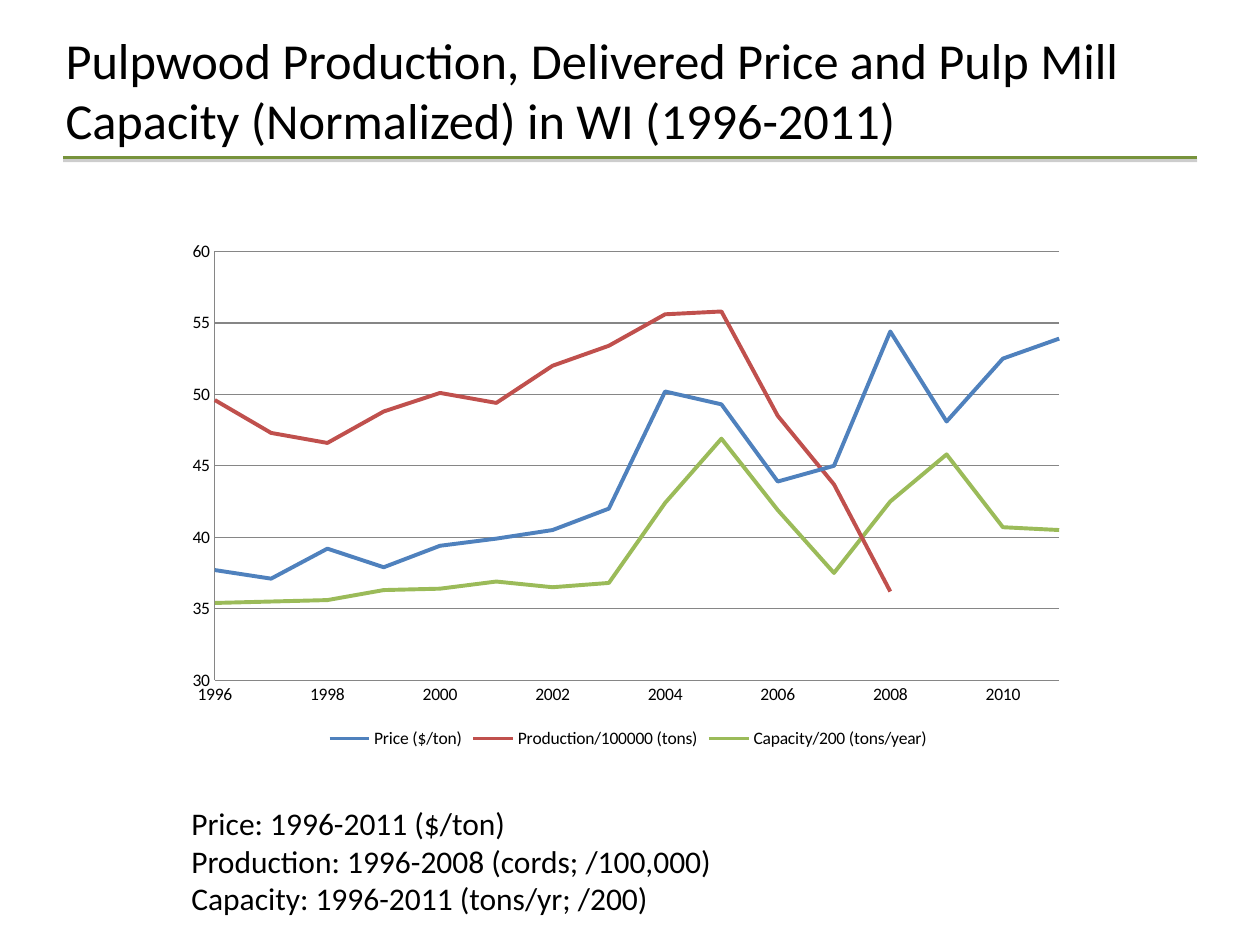
from lxml.etree import SubElement
from pptx import Presentation
from pptx.chart.data import XyChartData
from pptx.dml.color import RGBColor
from pptx.enum.chart import XL_CHART_TYPE, XL_LEGEND_POSITION, XL_TICK_MARK
from pptx.enum.shapes import MSO_CONNECTOR
from pptx.enum.text import MSO_ANCHOR, MSO_AUTO_SIZE, PP_ALIGN
from pptx.oxml import parse_xml
from pptx.oxml.ns import nsdecls, qn
from pptx.util import Inches, Pt

TITLE = "Pulpwood Production, Delivered Price and Pulp Mill Capacity (Normalized) in WI (1996-2011)"
NOTES = [
    "Price: 1996-2011 ($/ton)",
    "Production: 1996-2008 (cords; /100,000)",
    "Capacity: 1996-2011 (tons/yr; /200)",
]
FIRST_YEAR, LAST_YEAR = 1996, 2011
SERIES = [
    ("Price ($/ton)", "4F81BD",
     [37.7, 37.1, 39.2, 37.9, 39.4, 39.9, 40.5, 42, 50.2, 49.3, 43.9, 45, 54.4, 48.1, 52.5, 53.9]),
    ("Production/100000 (tons)", "C0504D",
     [49.6, 47.3, 46.6, 48.8, 50.1, 49.4, 52, 53.4, 55.6, 55.8, 48.5, 43.7, 36.2]),
    ("Capacity/200 (tons/year)", "9BBB59",
     [35.4, 35.5, 35.6, 36.3, 36.4, 36.9, 36.5, 36.8, 42.4, 46.9, 41.9, 37.5, 42.5, 45.8, 40.7, 40.5]),
]
PLOT_LAYOUT = {"x": 0.04, "y": 0.04, "w": 0.94, "h": 0.82}
THEME = {
    "font": "Calibri", "text": "000000", "rule": "77933C", "grid": "868686",
    "title": 28.8, "notes": 18, "chart": 10,
}


def color(value):
    return RGBColor.from_string(value)


def style_font(font, size):
    font.name = THEME["font"]
    font.size = Pt(size)
    font.color.rgb = color(THEME["text"])


def add_run(p, text, size):
    r = p.add_run()
    r.text = text
    style_font(r.font, size)


def add_title(slide):
    sp = slide.shapes.title
    sp.left, sp.top, sp.width, sp.height = map(Inches, (0.42, 0.17, 9, 1.08))
    tf = sp.text_frame
    tf.auto_size = MSO_AUTO_SIZE.NONE
    tf.vertical_anchor = MSO_ANCHOR.MIDDLE
    p = tf.paragraphs[0]
    p.alignment = PP_ALIGN.LEFT
    add_run(p, TITLE, THEME["title"])


def add_rule(slide):
    rule = slide.shapes.add_connector(
        MSO_CONNECTOR.STRAIGHT, Inches(0.5), Inches(1.25), Inches(9.5), Inches(1.25))
    rule.line.color.rgb = color(THEME["rule"])
    rule.line.width = Pt(2)
    rule._element.spPr.append(parse_xml(
        f'<a:effectLst {nsdecls("a")}><a:outerShdw blurRad="0" dist="20320" dir="5400000" rotWithShape="0">'
        '<a:srgbClr val="808080"><a:alpha val="38000"/></a:srgbClr></a:outerShdw></a:effectLst>'))


def add_notes(slide):
    box = slide.shapes.add_textbox(*map(Inches, (1.42, 6.33, 5.6, 1.01)))
    tf = box.text_frame
    tf.word_wrap = True
    tf.auto_size = MSO_AUTO_SIZE.SHAPE_TO_FIT_TEXT
    for i, text in enumerate(NOTES):
        p = tf.add_paragraph() if i else tf.paragraphs[0]
        add_run(p, text, THEME["notes"])


def set_plot_layout(chart):
    plot_area = chart._chartSpace.chart.plotArea
    layout = plot_area.find(qn("c:layout"))
    if layout is None:
        layout = parse_xml(f'<c:layout {nsdecls("c")}/>')
        plot_area.insert(0, layout)
    manual = SubElement(layout, qn("c:manualLayout"))
    settings = {"layoutTarget": "inner", "xMode": "edge", "yMode": "edge", **PLOT_LAYOUT}
    for tag, value in settings.items():
        SubElement(manual, qn(f"c:{tag}")).set("val", str(value))


def style_axis(axis, low, high, step):
    axis.minimum_scale, axis.maximum_scale, axis.major_unit = low, high, step
    axis.major_tick_mark = axis.minor_tick_mark = XL_TICK_MARK.NONE
    axis.tick_labels.number_format = "General"
    axis.tick_labels.number_format_is_linked = False
    axis.format.line.color.rgb = color(THEME["grid"])
    axis.format.line.width = Pt(0.75)


def add_chart(slide):
    data = XyChartData()
    for name, _, values in SERIES:
        series = data.add_series(name)
        for year, value in enumerate(values, FIRST_YEAR):
            series.add_data_point(year, value)
    chart = slide.shapes.add_chart(
        XL_CHART_TYPE.XY_SCATTER_SMOOTH_NO_MARKERS,
        *map(Inches, (1.42, 1.83, 7.13, 4.15)), data).chart
    style_font(chart.font, THEME["chart"])
    chart.has_title = False
    chart.has_legend = True
    chart.legend.position = XL_LEGEND_POSITION.BOTTOM
    chart.legend.include_in_layout = False
    chart.plots[0].vary_by_categories = False
    for series, (_, line_color, _) in zip(chart.plots[0].series, SERIES):
        series.smooth = True
        series.format.line.color.rgb = color(line_color)
        series.format.line.width = Pt(2.25)
    style_axis(chart.category_axis, FIRST_YEAR, LAST_YEAR, 2)
    style_axis(chart.value_axis, 30, 60, 5)
    chart.category_axis.has_major_gridlines = False
    chart.value_axis.has_major_gridlines = True
    grid = chart.value_axis.major_gridlines.format.line
    grid.color.rgb = color(THEME["grid"])
    grid.width = Pt(0.75)
    set_plot_layout(chart)


def main():
    """Build the pulpwood trends slide."""
    prs = Presentation()
    prs.slide_width, prs.slide_height = Inches(10), Inches(7.5)
    s = prs.slides.add_slide(prs.slide_layouts[5])
    add_rule(s)
    add_title(s)
    add_notes(s)
    add_chart(s)
    prs.save("out.pptx")


if __name__ == "__main__":
    main()
